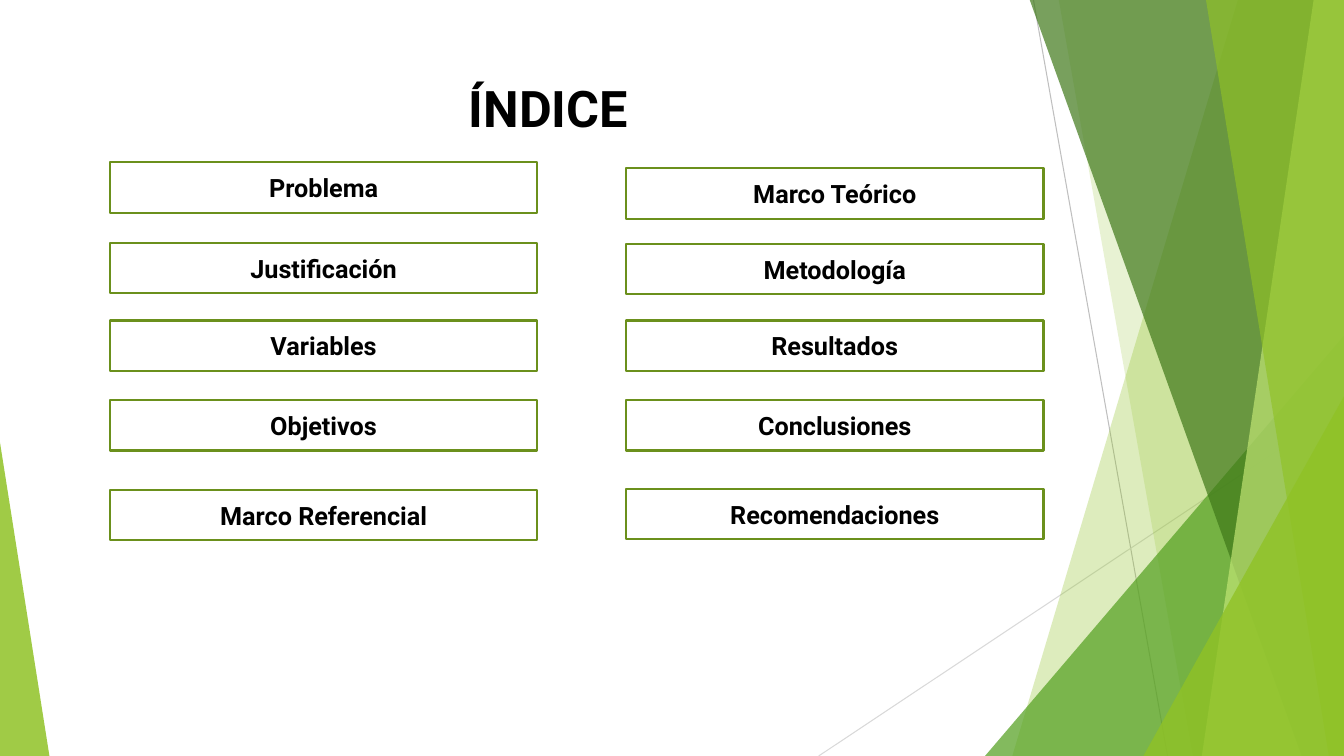
import pptx
import pptx.dml.color
import pptx.enum.shapes
import pptx.enum.text
import pptx.oxml
import pptx.oxml.ns
import pptx.util
from pptx.util import Inches

WIDTH, HEIGHT, TOP = 13.33, 7.5, -0.01
BOX_HEIGHT = 0.5
FONT = {"name": "Roboto", "bold": True}
FRAME = {"word_wrap": True, "vertical_anchor": pptx.enum.text.MSO_ANCHOR.MIDDLE}

GUIDES = [
    ((10.25, 0), (11.58, HEIGHT), "BFBFBF"),
    ((WIDTH, 4.03), (8.12, HEIGHT), "D9D9D9"),
]
BACK_BANDS = [(12.28, 10.04, "90C226", 30), (10.5, 11.83, "90C226", 20)]
FRONT_BANDS = [
    (10.21, 12.91, "3F7819", 70),
    (13.03, 11.92, "C0E474", 70),
    (11.96, 13.18, "90C226", 65),
]
COLUMNS = [
    (1.09, 4.24, [
        ("Problema", 1.61),
        ("Justificación", 2.41),
        ("Variables", 3.18),
        ("Objetivos", 3.97),
        ("Marco Referencial", 4.86),
    ]),
    (6.21, 4.14, [
        ("Marco Teórico", 1.67),
        ("Metodología", 2.42),
        ("Resultados", 3.18),
        ("Conclusiones", 3.97),
        ("Recomendaciones", 4.85),
    ]),
]


def color(value):
    return pptx.dml.color.RGBColor.from_string(value)


def apply(target, values):
    for name, value in values.items():
        setattr(target, name, value)


def paint(shape, value, opacity):
    shape.shadow.inherit = False
    shape.fill.solid()
    shape.fill.fore_color.rgb = color(value)
    shape.line.fill.background()
    fill = shape.element.spPr.find(pptx.oxml.ns.qn("a:solidFill"))
    namespace = pptx.oxml.ns.nsdecls("a")
    fill[0].append(pptx.oxml.parse_xml(f'<a:alpha {namespace} val="{opacity * 1000}"/>'))


def add_guide(page, start, end, value):
    points = [Inches(number) for number in start + end]
    line = page.shapes.add_connector(pptx.enum.shapes.MSO_CONNECTOR.STRAIGHT, *points)
    line.line.color.rgb = color(value)
    line.line.width = pptx.util.Pt(0.75)
    namespace = pptx.oxml.ns.nsdecls("a")
    line.element.spPr.append(pptx.oxml.parse_xml(f"<a:effectLst {namespace}/>"))


def add_band(page, top_x, bottom_x, value, opacity):
    corners = [(WIDTH, TOP), (WIDTH, HEIGHT), (bottom_x, HEIGHT)]
    builder = page.shapes.build_freeform(Inches(top_x), Inches(TOP))
    builder.add_line_segments([(Inches(x), Inches(y)) for x, y in corners], close=True)
    paint(builder.convert_to_shape(), value, opacity)


def add_triangle(page, left, top, width, tip, value, opacity):
    triangle = page.shapes.add_shape(
        pptx.enum.shapes.MSO_SHAPE.ISOSCELES_TRIANGLE,
        Inches(left), Inches(top), Inches(width), Inches(HEIGHT - top))
    triangle.adjustments[0] = tip
    paint(triangle, value, opacity)


def write(shape, text, size):
    apply(shape.text_frame, FRAME)
    para = shape.text_frame.paragraphs[0]
    para.alignment = pptx.enum.text.PP_ALIGN.CENTER
    span = para.add_run()
    span.text = text
    apply(span.font, {**FONT, "size": pptx.util.Pt(size)})
    span.font.color.rgb = color("000000")


def add_topic(page, text, left, top, width):
    box = page.shapes.add_shape(
        pptx.enum.shapes.MSO_SHAPE.RECTANGLE,
        Inches(left), Inches(top), Inches(width), Inches(BOX_HEIGHT))
    box.shadow.inherit = False
    box.fill.background()
    box.line.color.rgb = color("6B901C")
    box.line.width = pptx.util.Pt(1.5)
    write(box, text, 18)


def set_title(page, text):
    title = page.shapes.title
    apply(title, {"left": Inches(0.74), "top": Inches(0.67),
                  "width": Inches(9.4), "height": Inches(0.79)})
    write(title, text, 36)
    title.element.getparent().append(title.element)


def main():
    deck = pptx.Presentation()
    apply(deck, {"slide_width": Inches(WIDTH), "slide_height": Inches(HEIGHT)})
    page = deck.slides.add_slide(deck.slide_layouts.get_by_name("Title Only"))
    for guide in GUIDES:
        add_guide(page, *guide)
    for band in BACK_BANDS:
        add_band(page, *band)
    add_triangle(page, 9.77, 3.33, 3.56, 1, "54A021", 72)
    for band in FRONT_BANDS:
        add_band(page, *band)
    add_triangle(page, 11.34, 3.93, 1.99, 1, "90C226", 80)
    add_triangle(page, 0, 4.39, 0.49, 0, "90C226", 85)
    set_title(page, "ÍNDICE")
    for left, width, topics in COLUMNS:
        for text, top in topics:
            add_topic(page, text, left, top, width)
    deck.save("out.pptx")


if __name__ == "__main__":
    main()
